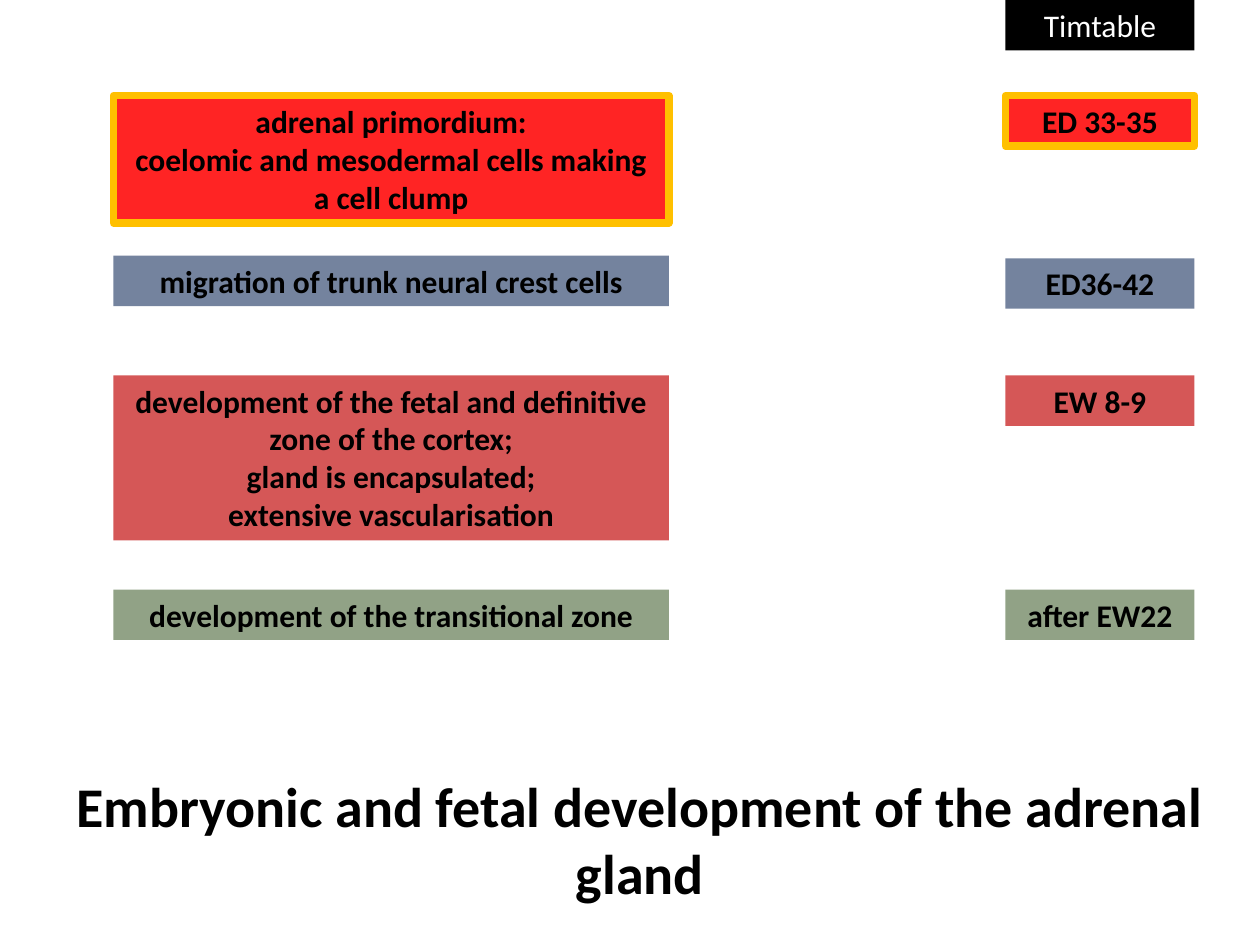
"""Build a slide on the embryonic and fetal development of the adrenal gland."""
from lxml.etree import SubElement
from pptx import Presentation
from pptx.dml.color import RGBColor
from pptx.enum.shapes import MSO_SHAPE
from pptx.enum.text import MSO_ANCHOR, MSO_AUTO_SIZE, PP_ALIGN
from pptx.oxml.ns import qn
from pptx.util import Inches, Pt


def write(holder, lines, color="000000", **changes):
    frame_format = {"word_wrap": True, "auto_size": MSO_AUTO_SIZE.SHAPE_TO_FIT_TEXT,
                    "vertical_anchor": MSO_ANCHOR.TOP}
    for name, value in frame_format.items():
        setattr(holder.text_frame, name, value)
    font_format = {"name": "Calibri", "size": Pt(18), "bold": True} | changes
    holder.text_frame.text = "\n".join(lines)
    for paragraph in holder.text_frame.paragraphs:
        paragraph.alignment = PP_ALIGN.CENTER
        for name, value in font_format.items():
            setattr(paragraph.font, name, value)
        paragraph.font.color.rgb = RGBColor.from_string(color)


def add_block(box, fill, opacity=100, border=None):
    block = slide.shapes.add_shape(MSO_SHAPE.RECTANGLE, *map(Inches, box))
    block.shadow.inherit = False
    block.fill.solid()
    block.fill.fore_color.rgb = RGBColor.from_string(fill)
    if opacity < 100:
        tint = block.fill._xPr.find(qn("a:solidFill"))[0]
        SubElement(tint, qn("a:alpha")).set("val", str(opacity * 1000))
    if border:
        block.line.color.rgb = RGBColor.from_string(border)
        block.line.width = Pt(4.25)
    else:
        block.line.fill.background()
    return block


deck = Presentation()
deck.slide_width, deck.slide_height = Inches(10), Inches(7.5)
slide = deck.slides.add_slide(deck.slide_layouts[6])

stage_left, stage_width = 0.9, 4.41
time_left, time_width = 7.98, 1.5
row_height = 0.4

stages = [
    (0.76, 1.01, ["adrenal primordium:",
                  "coelomic and mesodermal cells making a cell clump"],
     0.76, "ED 33-35", ("FF0000", 86, "FFC000")),
    (2.03, row_height, ["migration of trunk neural crest cells"],
     2.05, "ED36-42", ("203864", 62)),
    (2.98, 1.31, ["development of the fetal and definitive zone of the cortex;",
                  "gland is encapsulated;", "extensive vascularisation"],
     2.98, "EW 8-9", ("C00000", 66)),
    (4.68, row_height, ["development of the transitional zone"],
     4.68, "after EW22", ("385723", 55)),
]

for stage_top, stage_height, events, time_top, period, look in stages:
    write(add_block((stage_left, stage_top, stage_width, stage_height), *look), events)
    write(add_block((time_left, time_top, time_width, row_height), *look), [period])

timetable = add_block((time_left, 0, time_width, row_height), "000000")
write(timetable, ["Timtable"], "FFFFFF", bold=False)

title = slide.shapes.add_textbox(Inches(0.44), Inches(6.07), Inches(9.28), Inches(1.18))
write(title, ["Embryonic and fetal development of the adrenal gland"], size=Pt(32))

deck.save("out.pptx")
